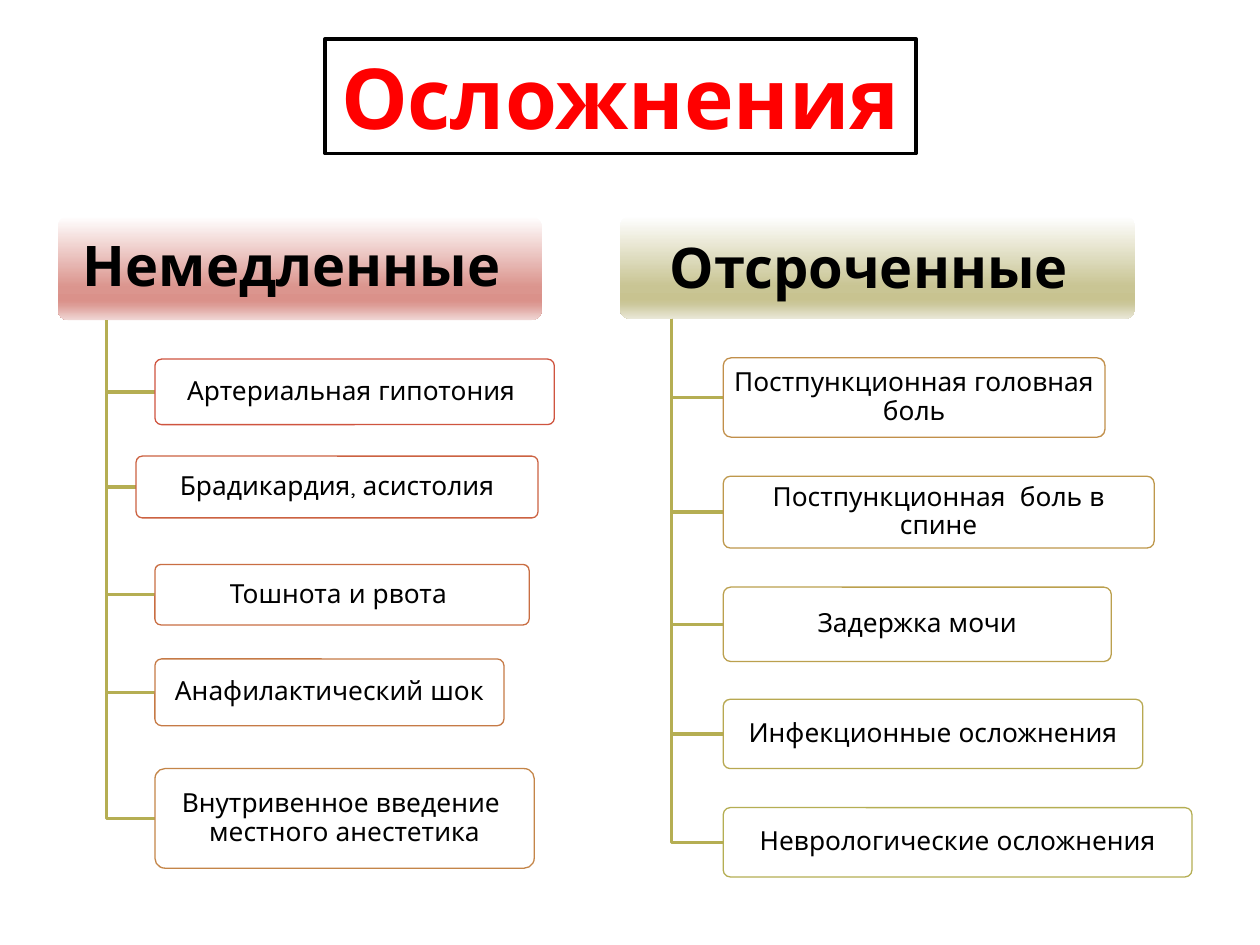
import pptx
import pptx.dml.color
import pptx.enum.shapes
import pptx.enum.text
import pptx.oxml.ns
import pptx.util
from lxml import etree

COLORS = {
    "title": "FF0000", "text": "000000", "paper": "FFFFFF", "branch": "B5AE53",
    "red": ["FFFEFE", "DB958E", "DA918A", "DD9D97", "F0D7D5"],
    "olive": ["FEFEFE", "C9C594", "C8C390", "CCC89C", "E9E7D7"],
}
STOPS = [0, 68, 81, 86, 100]
COLUMNS, ROWS = 100, 75

TREES = [
    ("red", (4.6, 17.2, 38.4, 8.2), [("Немедленные ", 32, True)], [
        ("Артериальная гипотония ", (12.3, 28.5, 31.7, 5.2), "CF543F"),
        ("Брадикардия, асистолия", (10.8, 36.2, 31.9, 4.9), "CC6241"),
        ("Тошнота и рвота ", (12.3, 44.8, 29.7, 4.8), "C96E43"),
        ("Анафилактический шок", (12.3, 52.3, 27.7, 5.3), "C67A46"),
        ("Внутривенное введение  местного анестетика", (12.3, 61, 30.1, 7.9), "C48548"),
    ]),
    ("olive", (49.2, 17.2, 40.9, 8.1), [("Отсроченные", 32, True), (" ", 36, False)], [
        ("Постпункционная головная боль", (57.4, 28.4, 30.3, 6.3), "C18F4A"),
        ("Постпункционная  боль в спине", (57.4, 37.8, 34.2, 5.7), "BE984C"),
        ("Задержка мочи", (57.4, 46.6, 30.8, 5.9), "BBA04E"),
        ("Инфекционные осложнения", (57.4, 55.5, 33.3, 5.5), "B8A851"),
        ("Неврологические осложнения", (57.4, 64.1, 37.2, 5.5), "B5AE53"),
    ]),
]


def rgb(color):
    return pptx.dml.color.RGBColor.from_string(color)


class Board:
    font = "Quicksand"

    def __init__(self, prs):
        self.s = prs.slides.add_slide(prs.slide_layouts[5])
        self.col = prs.slide_width / COLUMNS
        self.row = prs.slide_height / ROWS

    def grid(self, x, y):
        return round(x * self.col), round(y * self.row)

    def outline(self, sp, color, width):
        sp.line.color.rgb = rgb(color)
        sp.line.width = pptx.util.Pt(width)

    def paint(self, sp, color):
        sp.fill.solid()
        sp.fill.fore_color.rgb = rgb(color)

    def label(self, sp, runs, color, spacing, inset):
        tf = sp.text_frame
        tf.word_wrap = True
        tf.auto_size = pptx.enum.text.MSO_AUTO_SIZE.NONE
        tf.vertical_anchor = pptx.enum.text.MSO_ANCHOR.MIDDLE
        tf.margin_left = tf.margin_right = pptx.util.Inches(inset[0])
        tf.margin_top = tf.margin_bottom = pptx.util.Inches(inset[1])
        p = tf.paragraphs[0]
        p.alignment = pptx.enum.text.PP_ALIGN.CENTER
        p.line_spacing = spacing
        for text, size, bold in runs:
            r = p.add_run()
            r.text = text
            r.font.name = self.font
            r.font.size = pptx.util.Pt(size)
            r.font.bold = bold
            r.font.color.rgb = rgb(color)

    def title(self, text, box):
        sp = self.s.shapes.title
        sp.left, sp.top = self.grid(*box[:2])
        sp.width, sp.height = self.grid(*box[2:])
        self.paint(sp, COLORS["paper"])
        self.outline(sp, COLORS["text"], 2)
        self.label(sp, [(text, 48, True)], COLORS["title"], 1.0, (0.1, 0.05))

    def rounded(self, box):
        kind = pptx.enum.shapes.MSO_SHAPE.ROUNDED_RECTANGLE
        sp = self.s.shapes.add_shape(kind, *self.grid(*box[:2]), *self.grid(*box[2:]))
        sp.adjustments[0] = 0.1
        sp.shadow.inherit = False
        return sp

    def heading(self, runs, box, colors):
        sp = self.rounded(box)
        sp.line.fill.background()
        sp.fill.gradient()
        sp.fill.gradient_angle = 270
        qn = pptx.oxml.ns.qn
        stops = sp._element.spPr.find(qn("a:gradFill")).find(qn("a:gsLst"))
        for old in list(stops):
            stops.remove(old)
        for position, color in zip(STOPS, colors):
            gs = etree.SubElement(stops, qn("a:gs"), pos=str(position * 1000))
            etree.SubElement(gs, qn("a:srgbClr"), val=color)
        self.label(sp, runs, COLORS["text"], 0.9, (0.09, 0.06))

    def item(self, text, box, color):
        sp = self.rounded(box)
        self.paint(sp, COLORS["paper"])
        self.outline(sp, color, 0.75)
        self.label(sp, [(text, 15, False)], COLORS["text"], 0.9, (0.05, 0.03))

    def branch(self, x, y, box):
        middle = box[1] + box[3] / 2
        builder = self.s.shapes.build_freeform(*self.grid(x, y))
        corners = [self.grid(x, middle), self.grid(box[0], middle)]
        builder.add_line_segments(corners, close=False)
        sp = builder.convert_to_shape()
        sp.fill.background()
        sp.shadow.inherit = False
        self.outline(sp, COLORS["branch"], 2)

    def tree(self, palette, box, runs, items):
        left, top, width, height = box
        self.heading(runs, box, COLORS[palette])
        for text, item_box, color in items:
            self.branch(left + width / 10, top + height, item_box)
            self.item(text, item_box, color)


def main():
    prs = pptx.Presentation()
    prs.slide_width = pptx.util.Inches(10)
    prs.slide_height = pptx.util.Inches(7.5)
    board = Board(prs)
    board.title("Осложнения ", (25.8, 3.1, 46.9, 9.1))
    for tree in TREES:
        board.tree(*tree)
    prs.save("out.pptx")


if __name__ == "__main__":
    main()
